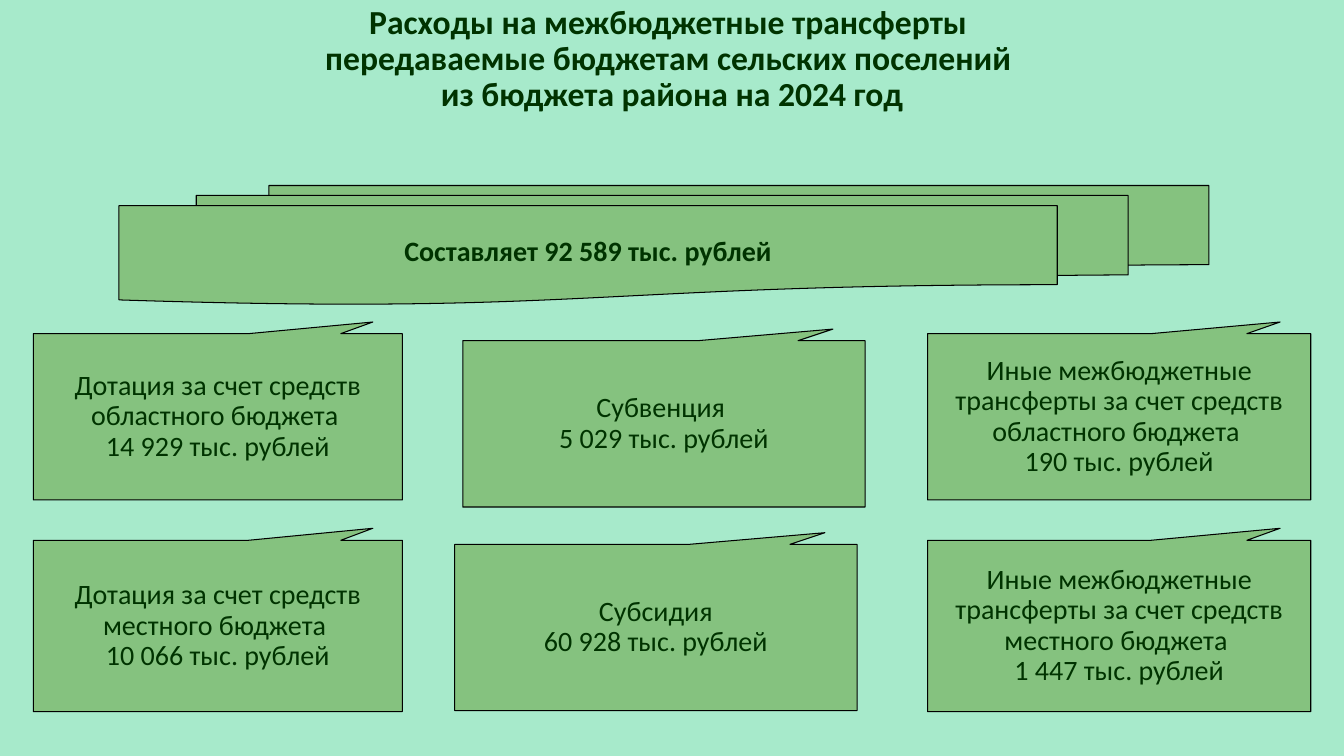
from dataclasses import dataclass

from pptx import Presentation
from pptx.dml.color import RGBColor
from pptx.enum.shapes import MSO_SHAPE
from pptx.enum.text import MSO_ANCHOR, MSO_AUTO_SIZE, PP_ALIGN
from pptx.shapes.autoshape import Shape
from pptx.slide import Slide
from pptx.text.text import TextFrame
from pptx.util import Inches, Pt

COLORS = {"page": "A7EACB", "box": "85C27F", "outline": "000000", "text": "003300"}
FONT = "Calibri"

LEFT_COLUMN = (0.33, 3.66)
RIGHT_COLUMN = (9.2, 3.8)
UPPER_ROW = (3.31, 1.65)
LOWER_ROW = (5.36, 1.7)


@dataclass(frozen=True)
class Transfer:
    label: str
    amount: str
    column: tuple[float, float]  # left, width
    row: tuple[float, float]  # top, height


TRANSFERS = [
    Transfer("Дотация за счет средств областного бюджета ", "14 929", LEFT_COLUMN, UPPER_ROW),
    Transfer("Дотация за счет средств местного бюджета ", "10 066", LEFT_COLUMN, LOWER_ROW),
    Transfer("Иные межбюджетные трансферты за счет средств областного бюджета ", "190",
             RIGHT_COLUMN, UPPER_ROW),
    Transfer("Иные межбюджетные трансферты за счет средств местного бюджета ", "1 447",
             RIGHT_COLUMN, LOWER_ROW),
    Transfer("Субвенция ", "5 029", (4.59, 3.99), (3.38, 1.65)),
    Transfer("Субсидия", "60 928", (4.51, 3.99), (5.4, 1.65)),
]


def color(name: str) -> RGBColor:
    return RGBColor.from_string(COLORS[name])


def write(frame: TextFrame, text: str, size: int = 20, bold: bool = False,
          anchor: MSO_ANCHOR = MSO_ANCHOR.MIDDLE, wrap: bool = True) -> None:
    """Fill the frame with centred text, one paragraph per line."""
    frame.text = text
    frame.word_wrap = wrap
    frame.auto_size = MSO_AUTO_SIZE.NONE
    frame.vertical_anchor = anchor
    frame.margin_left = frame.margin_right = Inches(0.1)
    frame.margin_top = frame.margin_bottom = Inches(0.05)
    for para in frame.paragraphs:
        para.alignment = PP_ALIGN.CENTER
        para.line_spacing = 0.9
        for span in para.runs:
            span.font.name = FONT
            span.font.size = Pt(size)
            span.font.bold = bold
            span.font.color.rgb = color("text")


def add_box(page: Slide, kind: MSO_SHAPE, left: float, top: float,
            width: float, height: float) -> Shape:
    box = page.shapes.add_shape(kind, Inches(left), Inches(top), Inches(width), Inches(height))
    box.shadow.inherit = False
    box.fill.solid()
    box.fill.fore_color.rgb = color("box")
    box.line.color.rgb = color("outline")
    box.line.width = Pt(0.75)
    return box


def add_title(page: Slide) -> None:
    title = page.shapes.title
    title.left = title.top = Inches(0)
    title.width, title.height = Inches(13.33), Inches(1.19)
    write(title.text_frame,
          "Расходы на межбюджетные трансферты \n"
          "передаваемые бюджетам сельских поселений \n"
          "из бюджета района на 2024 год",
          size=24, bold=True, anchor=MSO_ANCHOR.TOP)


def add_transfer(page: Slide, transfer: Transfer) -> None:
    """Draw a callout turned upside down, with its text kept upright."""
    left, width = transfer.column
    top, height = transfer.row
    box = add_box(page, MSO_SHAPE.RECTANGULAR_CALLOUT, left, top, width, height)
    box.rotation = 180
    box.adjustments[0] = -0.42
    box.adjustments[1] = 0.57
    write(box.text_frame, f"{transfer.label}\n{transfer.amount} тыс. рублей")
    box.text_frame._txBody.bodyPr.set("rot", str(180 * 60000))


def main() -> None:
    deck = Presentation()
    deck.slide_width, deck.slide_height = Inches(13.33), Inches(7.5)
    page = deck.slides.add_slide(deck.slide_layouts[5])
    page.background.fill.solid()
    page.background.fill.fore_color.rgb = color("page")

    add_title(page)
    total = add_box(page, MSO_SHAPE.FLOWCHART_MULTIDOCUMENT, 1.18, 1.84, 10.81, 1.18)
    write(total.text_frame, "Составляет 92 589 тыс. рублей", bold=True, wrap=False)
    for transfer in TRANSFERS:
        add_transfer(page, transfer)

    deck.save("out.pptx")


if __name__ == "__main__":
    main()
